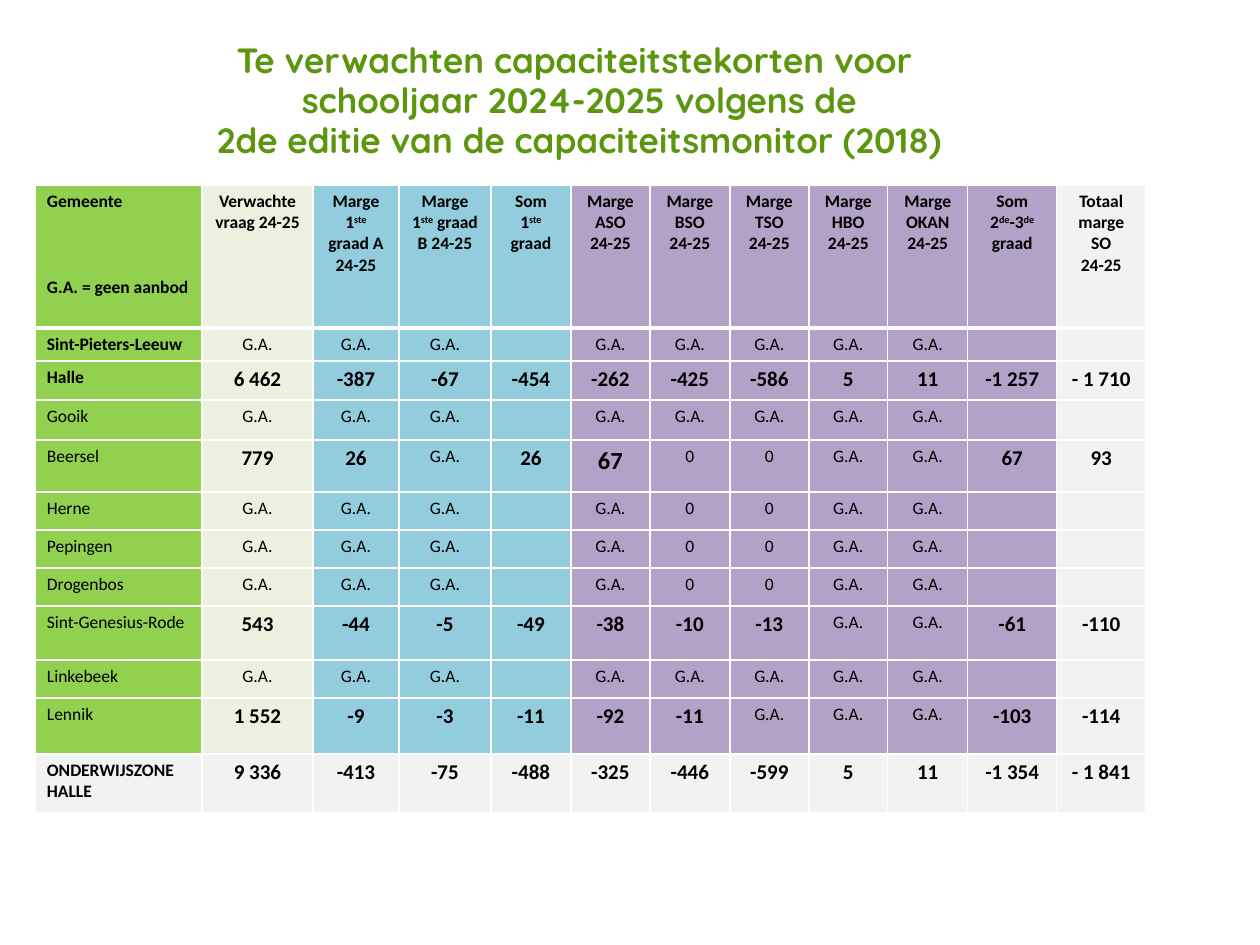
from dataclasses import dataclass
from lxml import etree
from pptx import Presentation
from pptx.dml.color import RGBColor
from pptx.enum.text import MSO_ANCHOR, PP_ALIGN
from pptx.oxml.ns import qn
from pptx.util import Emu, Pt

CENTER, LEFT, MIDDLE = PP_ALIGN.CENTER, PP_ALIGN.LEFT, MSO_ANCHOR.MIDDLE
EMU_PER_PX = 914400 / 126
GA = "G.A."


@dataclass(frozen=True)
class Theme:
    title_font: str = "Quicksand"
    table_font: str = "Calibri"
    title: str = "5C960E"
    ink: str = "000000"
    border: str = "FFFFFF"
    place: str = "92D050"
    demand: str = "EBF1DE"
    first_grade: str = "93CDDD"
    later_grades: str = "B3A2C7"
    total: str = "F2F2F2"
    title_size: int = 20
    label_size: int = 10
    figure_size: int = 12
    peak_size: int = 14
    thin: int = 1
    thick: int = 3


THEME = Theme()


@dataclass(frozen=True)
class Column:
    heading: str
    width: int
    fill: str


@dataclass(frozen=True)
class Municipality:
    name: str
    height: int
    values: tuple[str, ...]
    bold: bool = False
    is_total: bool = False


TITLE = ("Te verwachten capaciteitstekorten voor \n"
         "schooljaar 2024-2025 volgens de\n"
         "2de editie van de capaciteitsmonitor (2018)")
HEADER_HEIGHT = 143
LEGEND_GAP = 37

COLUMNS = (
    Column("Gemeente\nG.A. = geen aanbod", 167, THEME.place),
    Column("Verwachte vraag 24-25", 111, THEME.demand),
    Column("Marge 1^ste^ graad A\n24-25", 86, THEME.first_grade),
    Column("Marge 1^ste^ graad B 24-25", 92, THEME.first_grade),
    Column("Som\n1^ste^\ngraad", 80, THEME.first_grade),
    Column("Marge ASO\n24-25", 79, THEME.later_grades),
    Column("Marge\nBSO\n24-25", 80, THEME.later_grades),
    Column("Marge\nTSO\n24-25", 79, THEME.later_grades),
    Column("Marge HBO\n24-25", 79, THEME.later_grades),
    Column("Marge OKAN\n24-25", 80, THEME.later_grades),
    Column("Som\n2^de^-3^de^\ngraad", 89, THEME.later_grades),
    Column("Totaal marge SO\n24-25", 89, THEME.total),
)

NO_OFFER = (GA, GA, GA, "", GA, GA, GA, GA, GA, "", "")
NO_SHORTAGE = (GA, GA, GA, "", GA, "0", "0", GA, GA, "", "")

MUNICIPALITIES = (
    Municipality("Sint-Pieters-Leeuw", 33, NO_OFFER, bold=True),
    Municipality("Halle", 39, ("6 462", "-387", "-67", "-454", "-262", "-425", "-586",
                               "5", "11", "-1 257", "- 1 710"), bold=True),
    Municipality("Gooik", 40, NO_OFFER),
    Municipality("Beersel", 52, ("779", "26", GA, "26", "67", "0", "0",
                                 GA, GA, "67", "93")),
    Municipality("Herne", 38, NO_SHORTAGE),
    Municipality("Pepingen", 38, NO_SHORTAGE),
    Municipality("Drogenbos", 38, NO_SHORTAGE),
    Municipality("Sint-Genesius-Rode", 54, ("543", "-44", "-5", "-49", "-38", "-10", "-13",
                                            GA, GA, "-61", "-110")),
    Municipality("Linkebeek", 38, NO_OFFER),
    Municipality("Lennik", 56, ("1 552", "-9", "-3", "-11", "-92", "-11", GA,
                                GA, GA, "-103", "-114")),
    Municipality("ONDERWIJSZONE HALLE", 59, ("9 336", "-413", "-75", "-488", "-325", "-446",
                                             "-599", "5", "11", "-1 354", "- 1 841"),
                 bold=True, is_total=True),
)
PEAK = ("Beersel", "Marge ASO\n24-25")


def px(length: int) -> Emu:
    return Emu(round(length * EMU_PER_PX))


def style_font(font, family: str, size: int, color: str, bold: bool) -> None:
    font.name = family
    font.size = Pt(size)
    font.bold = bold
    font.color.rgb = RGBColor.from_string(color)


def draw_title(slide) -> None:
    heading = slide.shapes.add_textbox(px(63), px(38), px(1033), px(127))
    frame = heading.text_frame
    frame.word_wrap = True
    frame.vertical_anchor = MIDDLE
    paragraph = frame.paragraphs[0]
    paragraph.text = TITLE
    paragraph.alignment = CENTER
    paragraph.line_spacing = 0.96
    for run in paragraph.runs:
        style_font(run.font, THEME.title_font, THEME.title_size, THEME.title, True)


def set_borders(cell, top: int, bottom: int) -> None:
    properties = cell._tc.get_or_add_tcPr()
    widths = {"a:lnL": THEME.thin, "a:lnR": THEME.thin, "a:lnT": top, "a:lnB": bottom}
    for side, width in widths.items():
        line = etree.SubElement(properties, qn(side), w=str(Pt(width)))
        paint = etree.SubElement(line, qn("a:solidFill"))
        etree.SubElement(paint, qn("a:srgbClr"), val=THEME.border)


def fill_cell(cell, text: str, fill: str, size: int, bold: bool,
              alignment: PP_ALIGN, top: int, bottom: int) -> None:
    set_borders(cell, top, bottom)
    cell.fill.solid()
    cell.fill.fore_color.rgb = RGBColor.from_string(fill)
    cell.margin_left = cell.margin_right = px(12)
    cell.margin_top = cell.margin_bottom = px(6)
    frame = cell.text_frame
    for index, line in enumerate(text.split("\n")):
        paragraph = frame.add_paragraph() if index else frame.paragraphs[0]
        paragraph.alignment = alignment
        if not line:
            etree.SubElement(paragraph._p, qn("a:endParaRPr"), sz=str(size * 100))
            continue
        for part, words in enumerate(line.split("^")):
            if words:
                run = paragraph.add_run()
                run.text = words
                style_font(run.font, THEME.table_font, size, THEME.ink, bold)
                if part % 2:
                    run.font._element.set("baseline", "30000")


def figure_style(name: str, heading: str, value: str) -> tuple[int, bool]:
    if value in ("", "0", GA):
        return THEME.label_size, False
    if (name, heading) == PEAK:
        return THEME.peak_size, True
    return THEME.figure_size, True


def draw_capacity_table(slide) -> None:
    heights = [HEADER_HEIGHT] + [place.height for place in MUNICIPALITIES]
    widths = [column.width for column in COLUMNS]
    table = slide.shapes.add_table(len(heights), len(widths), px(35), px(185),
                                   px(sum(widths)), px(sum(heights))).table
    for row, height in zip(table.rows, heights):
        row.height = px(height)
    for index, column in enumerate(COLUMNS):
        table.columns[index].width = px(column.width)
        fill_cell(table.cell(0, index), column.heading, column.fill, THEME.label_size, True,
                  CENTER if index else LEFT, THEME.thin, THEME.thick)
    table.cell(0, 0).text_frame.paragraphs[1].space_before = Pt(LEGEND_GAP)

    for row, place in enumerate(MUNICIPALITIES, start=1):
        top = THEME.thick if row == 1 else THEME.thin
        for index, (column, text) in enumerate(zip(COLUMNS, (place.name, *place.values))):
            size, bold = THEME.label_size, place.bold
            if index:
                size, bold = figure_style(place.name, column.heading, text)
            fill = THEME.total if place.is_total else column.fill
            fill_cell(table.cell(row, index), text, fill, size, bold,
                      CENTER if index else LEFT, top, THEME.thin)


def main() -> None:
    presentation = Presentation()
    presentation.slide_width, presentation.slide_height = px(1260), px(945)
    slide = presentation.slides.add_slide(presentation.slide_layouts[6])
    draw_title(slide)
    draw_capacity_table(slide)
    presentation.save("out.pptx")


if __name__ == "__main__":
    main()
